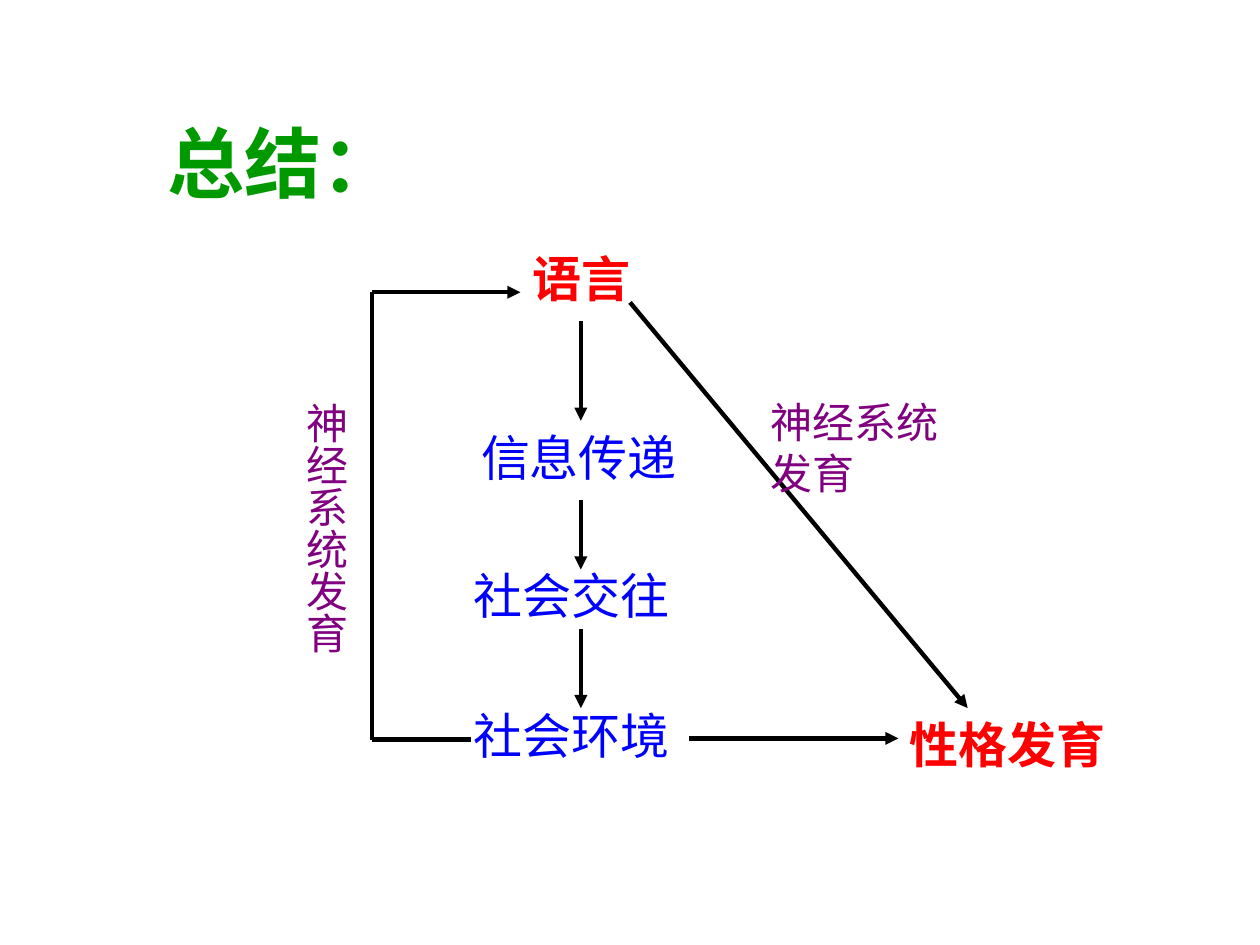
from lxml.etree import SubElement
from pptx import Presentation
from pptx.dml.color import RGBColor
from pptx.enum.shapes import MSO_CONNECTOR as CONN
from pptx.enum.text import MSO_AUTO_SIZE as FIT
from pptx.oxml.ns import qn
from pptx.util import Inches, Pt

BLACK = RGBColor(0x00, 0x00, 0x00)
RED = RGBColor(0xFF, 0x00, 0x00)
BLUE = RGBColor(0x00, 0x00, 0xFF)
PURPLE = RGBColor(0x80, 0x00, 0x80)
GREEN = RGBColor(0x00, 0x99, 0x00)


class Diagram:
    font = "Arial"
    line_width = Pt(2.5)

    def __init__(self, slide):
        self.s = slide

    def text(self, text, box, size, color, bold=False, wrap=False, vertical=False):
        sp = self.s.shapes.add_textbox(*map(Inches, box))
        tf = sp.text_frame
        tf.word_wrap = wrap
        tf.auto_size = FIT.SHAPE_TO_FIT_TEXT
        if vertical:
            tf._txBody.bodyPr.set("vert", "eaVert")
        r = tf.paragraphs[0].add_run()
        r.text = text
        r.font.name = self.font
        r.font.size = Pt(size)
        r.font.bold = bold
        r.font.color.rgb = color

    def line(self, start, end, arrow=True):
        sp = self.s.shapes.add_connector(CONN.STRAIGHT, *map(Inches, start + end))
        sp.line.width = self.line_width
        sp.line.color.rgb = BLACK
        if arrow:
            SubElement(sp.line._get_or_add_ln(), qn("a:tailEnd"), type="triangle")
        SubElement(sp._element.spPr, qn("a:effectLst"))


def main():
    prs = Presentation()
    prs.slide_width, prs.slide_height = Inches(10), Inches(7.5)
    d = Diagram(prs.slides.add_slide(prs.slide_layouts[6]))

    d.text("总结：", (1.23, 0.87, 2.03, 0.83), 44, GREEN, bold=True)

    d.text("语言", (4.13, 1.92, 0.98, 0.57), 28, RED, bold=True)
    d.text("性格发育", (7.12, 5.62, 1.76, 0.57), 28, RED, bold=True)
    steps = [("信息传递", 3.72, 3.34), ("社会交往", 3.66, 4.44), ("社会环境", 3.66, 5.55)]
    for label, left, top in steps:
        d.text(label, (left, top, 1.76, 0.57), 28, BLUE)

    chain_x = 4.61
    for top, bottom in [(2.55, 3.34), (3.97, 4.52), (4.99, 5.62)]:
        d.line((chain_x, top), (chain_x, bottom))

    loop_x, loop_top, loop_bottom = 2.95, 2.32, 5.87
    d.line((3.74, loop_bottom), (loop_x, loop_bottom), arrow=False)
    d.line((loop_x, loop_bottom), (loop_x, loop_top), arrow=False)
    d.line((loop_x, loop_top), (4.13, loop_top))

    d.line((5.47, 5.86), (7.13, 5.86))
    d.line((5, 2.4), (7.68, 5.62))

    nerve = "神经系统发育"
    d.text(nerve, (6.02, 3.1, 1.81, 0.9), 24, PURPLE, wrap=True)
    d.text(nerve, (2.24, 3.1, 0.6, 2.1), 24, PURPLE, vertical=True)

    prs.save("out.pptx")


if __name__ == "__main__":
    main()
